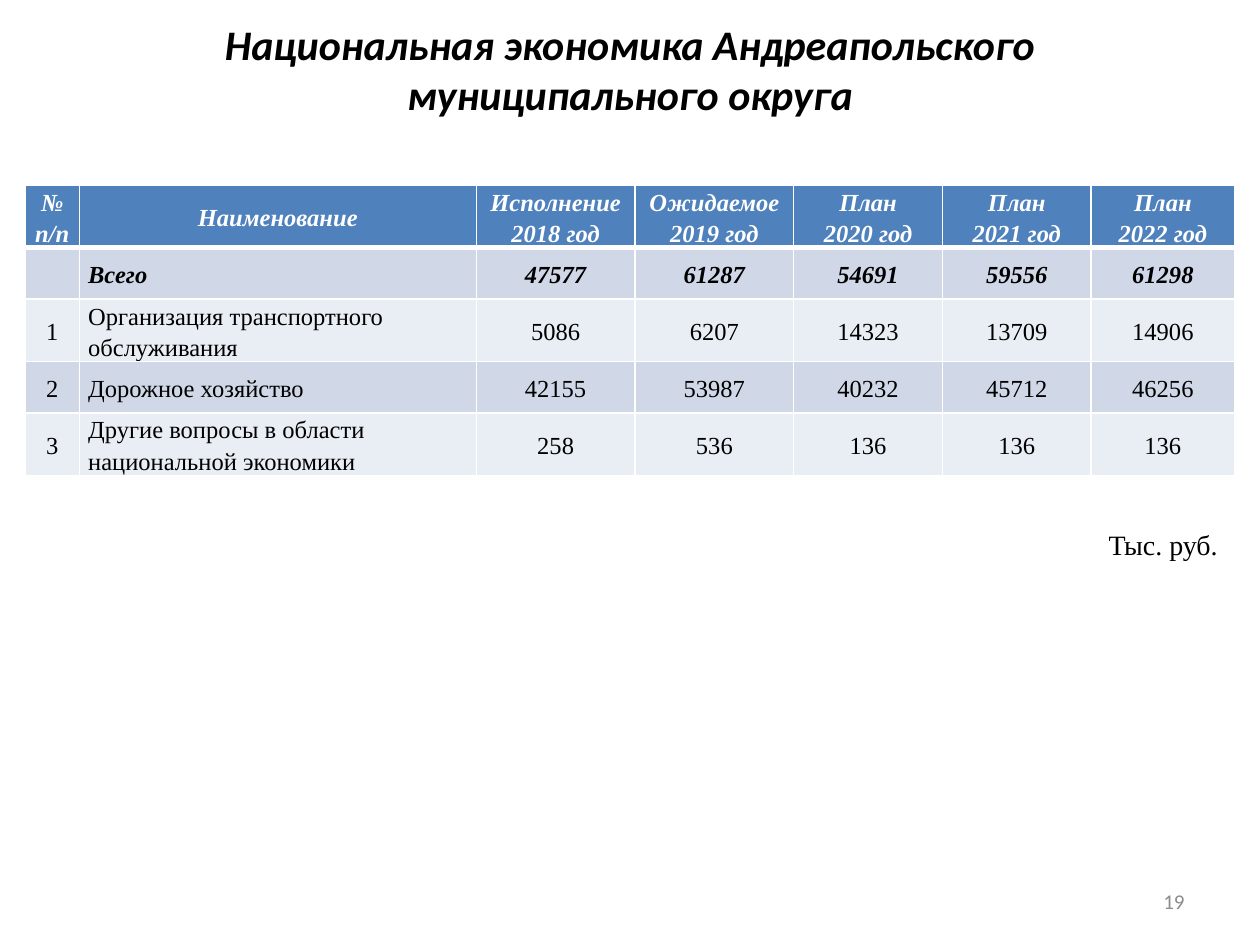
from lxml.etree import SubElement
from pptx import Presentation
from pptx.dml.color import RGBColor as Rgb
from pptx.enum.text import MSO_ANCHOR as Anchor, PP_ALIGN as Align
from pptx.oxml.ns import qn
from pptx.util import Inches, Pt

COLORS = {
    "text": "000000",
    "white": "FFFFFF",
    "head": "4F81BD",
    "dark": "D0D8E8",
    "light": "E9EDF4",
    "page": "8C8C8C",
}
SERIF = "Times New Roman"
SANS = "Calibri"

WIDTHS = [0.43, 3.15, 1.26, 1.26, 1.18, 1.18, 1.14]
ROW_H = 0.41
ROWS = [
    ["№ п/п", "Наименование", "Исполнение 2018 год", "Ожидаемое 2019 год",
     "План\n2020 год", "План\n2021 год", "План\n2022 год"],
    ["", "Всего", "47577", "61287", "54691", "59556", "61298"],
    ["1", "Организация транспортного обслуживания",
     "5086", "6207", "14323", "13709", "14906"],
    ["2", "Дорожное хозяйство", "42155", "53987", "40232", "45712", "46256"],
    ["3", "Другие вопросы в области национальной экономики",
     "258", "536", "136", "136", "136"],
]


def style(frame, size, face, color="text", bold=False, align=Align.LEFT, gap=None):
    for para in frame.paragraphs:
        para.alignment = align
        para.line_spacing = gap
        for run in para.runs:
            font = run.font
            font.size, font.name = Pt(size), face
            font.bold = font.italic = bold
            font.color.rgb = Rgb.from_string(COLORS[color])


def add_title(slide, box, text):
    title = slide.shapes.title
    title.left, title.top, title.width, title.height = map(Inches, box)
    frame = title.text_frame
    frame.text = text
    frame.vertical_anchor = Anchor.MIDDLE
    style(frame, 24, SANS, bold=True, align=Align.CENTER)


def add_note(slide, box, text, size, face, color="text", align=Align.LEFT,
             anchor=Anchor.TOP):
    frame = slide.shapes.add_textbox(*map(Inches, box)).text_frame
    frame.word_wrap = True
    frame.text = text
    frame.vertical_anchor = anchor
    style(frame, size, face, color, align=align)


def set_edges(cell, top, bottom):
    """White cell borders; the lines must come before the fill."""
    props = cell._tc.get_or_add_tcPr()
    sides = {"L": 1, "R": 1, "T": top, "B": bottom}
    for at, (side, width) in enumerate(sides.items()):
        line = SubElement(props, qn(f"a:ln{side}"), w=str(Pt(width)))
        fill = SubElement(line, qn("a:solidFill"))
        SubElement(fill, qn("a:srgbClr"), val=COLORS["white"])
        props.insert(at, line)


def fill_cell(cell, text, row, col):
    cell.margin_left = cell.margin_right = Inches(0.07)
    cell.margin_top = cell.margin_bottom = 0
    cell.vertical_anchor = Anchor.MIDDLE
    cell.text_frame.text = text
    left = row > 0 and col == 1
    style(cell.text_frame, 14, SERIF, "text" if row else "white",
          bold=row < 2, align=Align.LEFT if left else Align.CENTER, gap=1.15)
    band = "head" if row == 0 else "dark" if row % 2 else "light"
    cell.fill.solid()
    cell.fill.fore_color.rgb = Rgb.from_string(COLORS[band])
    set_edges(cell, top=3 if row == 1 else 1, bottom=1 if row else 3)


def add_budget(slide, left, top):
    box = (left, top, sum(WIDTHS), ROW_H * len(ROWS))
    table = slide.shapes.add_table(
        len(ROWS), len(WIDTHS), *map(Inches, box)).table
    for column, width in zip(table.columns, WIDTHS):
        column.width = Inches(width)
    for row, texts in enumerate(ROWS):
        for col, text in enumerate(texts):
            fill_cell(table.cell(row, col), text, row, col)


def main():
    deck = Presentation()
    deck.slide_width, deck.slide_height = Inches(10), Inches(7.5)
    slide = deck.slides.add_slide(deck.slide_layouts[5])

    # Title
    add_title(slide, (0.5, -0.08, 9, 1.25),
              "Национальная экономика Андреапольского муниципального округа")
    # Budget table and its unit
    add_budget(slide, 0.2, 1.47)
    add_note(slide, (8.7, 4.14, 1.09, 0.47), "Тыс. руб.", 16, SERIF)
    # Page number
    add_note(slide, (7.17, 6.95, 2.33, 0.4), "19", 12, SANS, "page",
             Align.RIGHT, Anchor.MIDDLE)
    deck.save("out.pptx")


if __name__ == "__main__":
    main()
